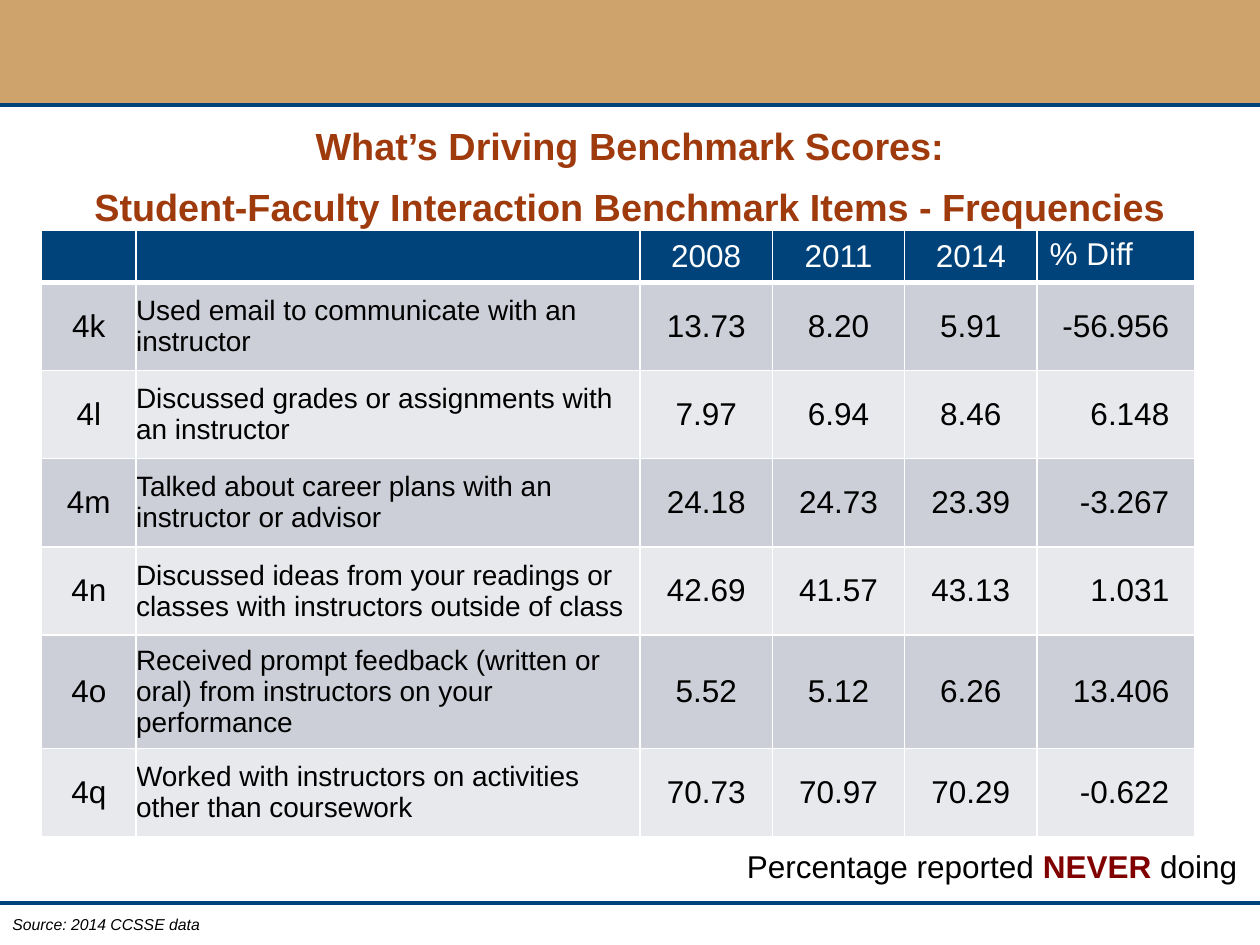
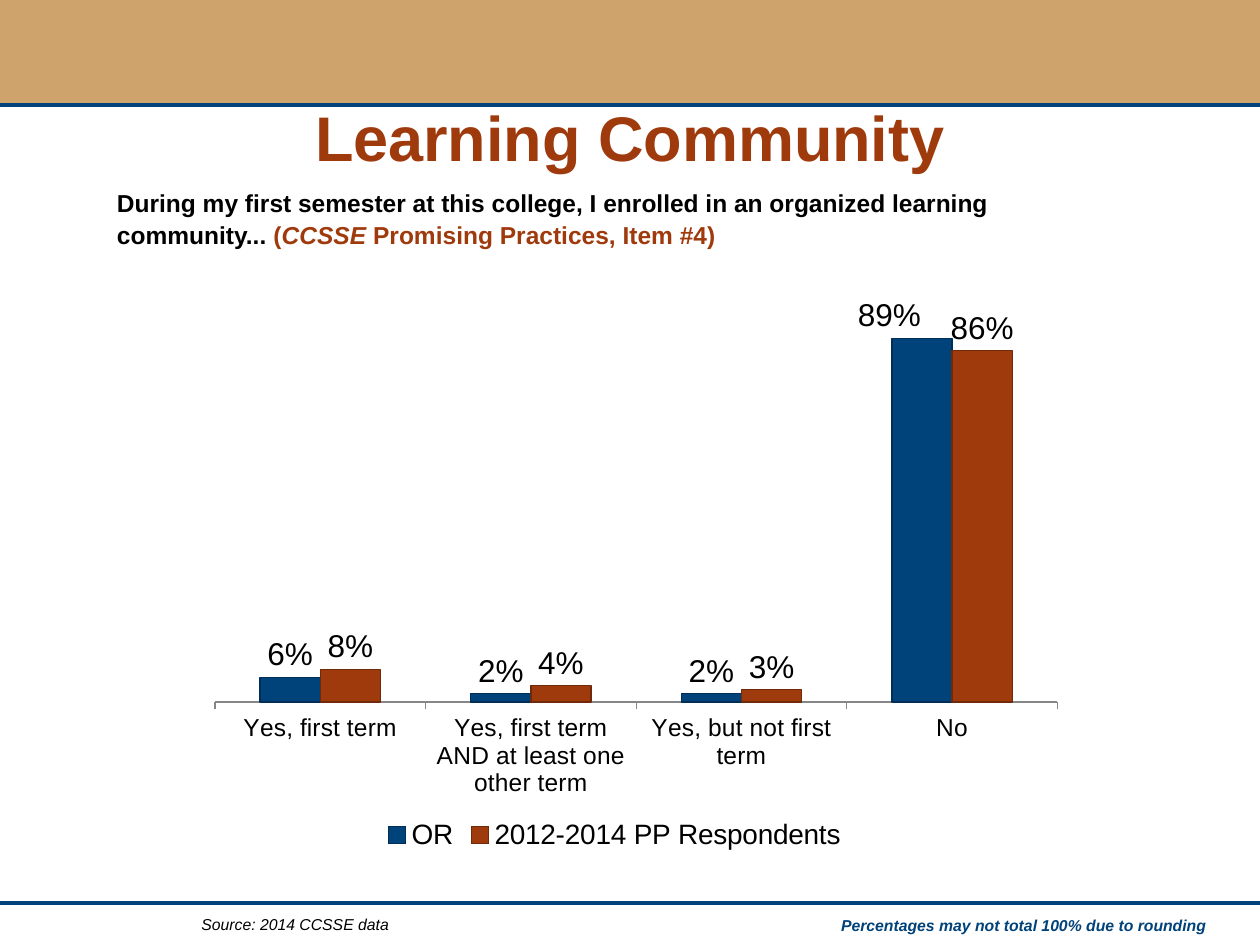
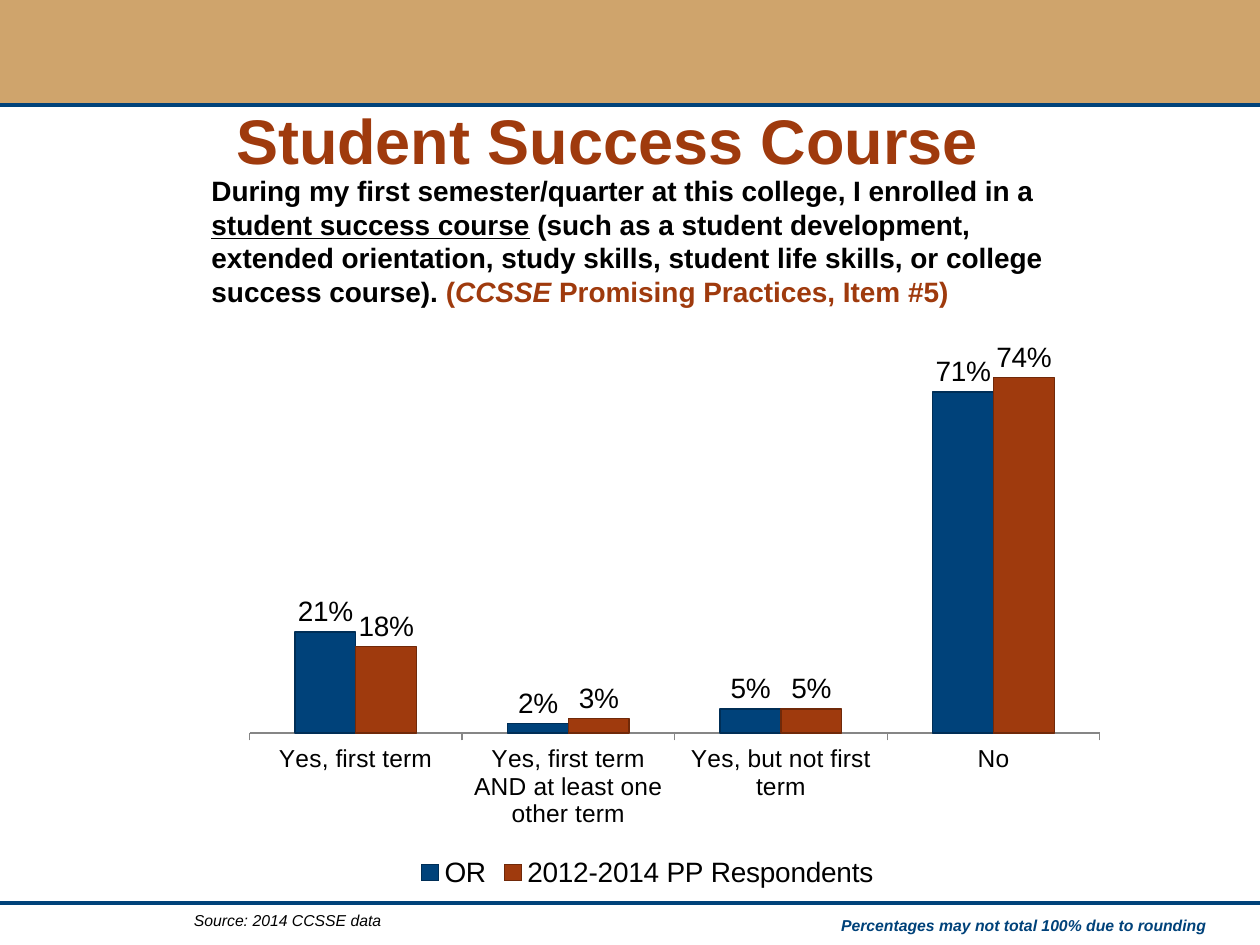
from lxml import etree
from pptx import Presentation
from pptx import util as u
from pptx.chart.data import CategoryChartData
from pptx.dml.color import RGBColor
from pptx.enum import chart as charts, shapes, text
from pptx.oxml import parse_xml
from pptx.oxml.ns import nsdecls, qn

Inches, Pt = u.Inches, u.Pt

TAN = RGBColor(0xCF, 0xA4, 0x6C)
NAVY = RGBColor(0x00, 0x42, 0x7A)
NAVY_EDGE = RGBColor(0x00, 0x2E, 0x56)
RUST = RGBColor(0x9F, 0x3A, 0x0D)
RUST_EDGE = RGBColor(0x70, 0x29, 0x09)
MAROON = RGBColor(0x80, 0x00, 0x00)
BLACK = RGBColor(0x00, 0x00, 0x00)
WHITE = RGBColor(0xFF, 0xFF, 0xFF)
AXIS_GRAY = RGBColor(0x86, 0x86, 0x86)
ROW_FILLS = (RGBColor(0xCC, 0xCF, 0xD7), RGBColor(0xE7, 0xE9, 0xEC))

FONT = "Arial"
LEFT, CENTER, RIGHT = text.PP_ALIGN.LEFT, text.PP_ALIGN.CENTER, text.PP_ALIGN.RIGHT
MIDDLE = text.MSO_ANCHOR.MIDDLE

TITLE = {"size": Pt(36), "bold": True, "color": RUST}
SOURCE = {"size": Pt(9), "italic": True}
ROUNDING = {"size": Pt(9), "bold": True, "italic": True, "color": NAVY}

HEADER = ["", "", "2008", "2011", "2014", "% Diff"]
ITEMS = [
    ["4k", "Used email to communicate with an instructor",
     "13.73", "8.20", "5.91", "-56.956"],
    ["4l", "Discussed grades or assignments with an instructor",
     "7.97", "6.94", "8.46", "6.148"],
    ["4m", "Talked about career plans with an instructor or advisor",
     "24.18", "24.73", "23.39", "-3.267"],
    ["4n", "Discussed ideas from your readings or classes with instructors outside of class",
     "42.69", "41.57", "43.13", "1.031"],
    ["4o", "Received prompt feedback (written or oral) from instructors on your performance",
     "5.52", "5.12", "6.26", "13.406"],
    ["4q", "Worked with instructors on activities other than coursework",
     "70.73", "70.97", "70.29", "-0.622"],
]
COLUMN_WIDTHS = [0.75, 4, 1.05, 1.05, 1.05, 1.25]
ROW_HEIGHTS = [0.41, 0.7, 0.7, 0.7, 0.7, 0.9, 0.7]

ANSWERS = ["Yes, first term", "Yes, first term AND at least one other term",
           "Yes, but not first term", "No"]
GROUPS = [("OR", NAVY, NAVY_EDGE), ("2012-2014 PP Respondents", RUST, RUST_EDGE)]


def set_font(font, **formats):
    formats = {"name": FONT, "color": BLACK, **formats}
    font.color.rgb = formats.pop("color")
    for name, value in formats.items():
        setattr(font, name, value)


def add_text(page, at, spans, align=LEFT, anchor=text.MSO_ANCHOR.TOP,
             wrap=True, spacing=None, **base):
    """Add a text box holding one paragraph of (words, formats) spans."""
    box = page.shapes.add_textbox(*map(Inches, at))
    frame = box.text_frame
    frame.word_wrap, frame.vertical_anchor = wrap, anchor
    para = frame.paragraphs[0]
    para.alignment = align
    if spacing:
        para.line_spacing = spacing
    for words, formats in spans:
        for number, line in enumerate(words.split("\n")):
            if number:
                para.add_line_break()
            span = para.add_run()
            span.text = line
            set_font(span.font, **{**base, **formats})


def add_title(page, at, words, **formats):
    add_text(page, at, [(words, {})], CENTER, MIDDLE, **{**TITLE, **formats})


def add_rule(page, y):
    rule = page.shapes.add_connector(
        shapes.MSO_CONNECTOR.STRAIGHT, 0, Inches(y), Inches(10), Inches(y))
    rule.line.color.rgb = NAVY
    rule.line.width = Pt(2.25)
    etree.SubElement(rule._element.spPr, qn("a:effectLst"))


def add_page(deck):
    """Add a blank slide with the tan band and the two navy rules."""
    page = deck.slides.add_slide(deck.slide_layouts[6])
    band = page.shapes.add_shape(
        shapes.MSO_SHAPE.RECTANGLE, 0, 0, Inches(10), Inches(0.83))
    band.shadow.inherit = False
    band.fill.solid()
    band.fill.fore_color.rgb = TAN
    band.line.fill.background()
    for y in (0.83, 7.17):
        add_rule(page, y)
    return page


def add_source(page, left, top):
    add_text(page, (left, top, 3.19, 0.25), [("Source: 2014 CCSSE data", SOURCE)])


def add_rounding_note(page):
    add_text(page, (6, 7.22, 3.67, 0.25),
             [("Percentages may not total 100% due to rounding", ROUNDING)], RIGHT)


def set_borders(cell, bottom):
    for side in "LRTB":
        points = bottom if side == "B" else 1
        cell._tc.get_or_add_tcPr().append(parse_xml(
            f'<a:ln{side} {nsdecls("a")} w="{Pt(points)}"><a:solidFill>'
            f'<a:srgbClr val="{WHITE}"/></a:solidFill></a:ln{side}>'))


def set_margins(cell, *inches):
    for side, inch in zip(("left", "top", "right", "bottom"), inches):
        setattr(cell, f"margin_{side}", Inches(inch))


def fill_cell(cell, words, row, column):
    is_header = row == 0
    set_borders(cell, 3 if is_header else 1)
    cell.fill.solid()
    cell.fill.fore_color.rgb = NAVY if is_header else ROW_FILLS[(row - 1) % 2]
    if not words:
        return
    para = cell.text_frame.paragraphs[0]
    para.alignment = CENTER
    cell.vertical_anchor = MIDDLE
    if is_header and column == 5:
        para.alignment = LEFT
        cell.vertical_anchor = text.MSO_ANCHOR.TOP
        set_margins(cell, 0.1, 0.05, 0.25, 0.05)
    elif column == 5:
        para.alignment = RIGHT
        set_margins(cell, 0, 0, 0.2, 0)
    elif column:
        set_margins(cell, 0, 0, 0, 0)
        if column == 1:
            para.alignment = LEFT
    span = para.add_run()
    span.text = words
    set_font(span.font, size=Pt(16 if column == 1 else 18),
             color=WHITE if is_header else BLACK)


def add_items_table(page):
    rows = [HEADER] + ITEMS
    at = (0.33, 1.83, sum(COLUMN_WIDTHS), sum(ROW_HEIGHTS))
    table = page.shapes.add_table(len(rows), len(HEADER), *map(Inches, at)).table
    for column, width in zip(table.columns, COLUMN_WIDTHS):
        column.width = Inches(width)
    for row, height in zip(table.rows, ROW_HEIGHTS):
        row.height = Inches(height)
    for r, row in enumerate(rows):
        for c, words in enumerate(row):
            fill_cell(table.cell(r, c), words, r, c)


def manual_layout(target="", **numbers):
    inner = f'<c:layoutTarget val="{target}"/>' if target else ""
    inner += "".join(f'<c:{name} val="{value}"/>' for name, value in numbers.items())
    return parse_xml(f'<c:layout {nsdecls("c")}><c:manualLayout>{inner}'
                     '</c:manualLayout></c:layout>')


def place_plot(chart, x, y, w, h):
    area = chart._chartSpace.chart.plotArea
    for old in area.findall(qn("c:layout")):
        area.remove(old)
    area.insert(0, manual_layout("inner", xMode="edge", yMode="edge", x=x, y=y, w=w, h=h))


def shift_label(series, point, x):
    """Move one data label sideways by a share of the chart width."""
    label = series.points[point].data_label
    set_font(label.font, size=Pt(18))
    label.position = charts.XL_LABEL_POSITION.OUTSIDE_END
    mark = series._element.find(qn("c:dLbls")).find(qn("c:dLbl"))
    mark.insert(1, manual_layout(x=x, y=0))


def add_answers_chart(page, at, plot_at, shares, top_value, label_size):
    data = CategoryChartData(number_format="0%")
    data.categories = ANSWERS
    for (name, _, _), values in zip(GROUPS, shares):
        data.add_series(name, values)
    chart = page.shapes.add_chart(
        charts.XL_CHART_TYPE.COLUMN_CLUSTERED, *map(Inches, at), data).chart
    set_font(chart.font, size=Pt(18))
    chart.has_title = False
    chart.has_legend = True
    chart.legend.position = charts.XL_LEGEND_POSITION.BOTTOM
    chart.legend.include_in_layout = False
    set_font(chart.legend.font, size=Pt(16))

    answers, scale = chart.category_axis, chart.value_axis
    set_font(answers.tick_labels.font, size=Pt(14))
    answers.major_tick_mark = charts.XL_TICK_MARK.OUTSIDE
    answers.format.line.color.rgb = AXIS_GRAY
    scale.minimum_scale, scale.maximum_scale = 0, top_value
    scale.has_major_gridlines = False
    scale.visible = False

    plot = chart.plots[0]
    plot.gap_width, plot.overlap, plot.vary_by_categories = 150, 0, False
    for series, (_, color, edge) in zip(plot.series, GROUPS):
        series.format.fill.solid()
        series.format.fill.fore_color.rgb = color
        series.format.line.color.rgb = edge
        series.format.line.width = Pt(0.75)
        labels = series.data_labels
        labels.show_value = True
        labels.number_format, labels.number_format_is_linked = "0%", False
        labels.position = charts.XL_LABEL_POSITION.OUTSIDE_END
        set_font(labels.font, size=Pt(label_size))
    place_plot(chart, *plot_at)
    return chart


def item_reference(number):
    return [("(", {"color": RUST}),
            ("CCSSE ", {"color": RUST, "italic": True}),
            (f"Promising Practices, Item #{number})", {"color": RUST})]


def build_frequencies(deck):
    page = add_page(deck)
    add_title(page, (0.21, 0.75, 9.58, 1.17),
              "What’s Driving Benchmark Scores:\n"
              "Student-Faculty Interaction Benchmark Items - Frequencies",
              size=Pt(21.6), spacing=Pt(35))
    add_text(page, (5.83, 6.67, 4.13, 0.4),
             [("Percentage reported ", {}),
              ("NEVER", {"color": MAROON, "bold": True}),
              (" doing", {})], wrap=False, size=Pt(18))
    add_items_table(page)
    add_source(page, 0, 7.21)


def build_learning_community(deck):
    page = add_page(deck)
    add_title(page, (1.69, 0.75, 6.62, 0.67), "Learning Community")
    add_text(page, (0.83, 1.42, 8.23, 0.67),
             [("During my first semester at this college, I enrolled in an "
               "organized learning community... ", {})] + item_reference(4),
             spacing=1.1, size=Pt(14), bold=True)
    chart = add_answers_chart(
        page, (1.19, 2.07, 7.38, 4.72), (0.07, 0.055, 0.906, 0.687),
        [(0.06, 0.02, 0.02, 0.89), (0.08, 0.04, 0.03, 0.86)], 1, 18)
    shift_label(chart.plots[0].series[0], 3, -0.035)
    add_source(page, 1.5, 7.21)
    add_rounding_note(page)


def build_success_course(deck):
    page = add_page(deck)
    add_title(page, (1.69, 0.58, 6.26, 1.06), "Student Success Course")
    add_answers_chart(
        page, (1.44, 2.33, 7.4, 4.76), (0.073, 0.092, 0.912, 0.641),
        [(0.21, 0.02, 0.05, 0.71), (0.18, 0.03, 0.05, 0.74)], 0.8, 16)
    add_text(page, (1.58, 1.33, 6.88, 1.25),
             [("During my first semester/quarter at this college, I enrolled in a ", {}),
              ("student success course", {"underline": True}),
              (" (such as a student development, extended orientation, study skills, "
               "student life skills, or college success course). ", {})]
             + item_reference(5), size=Pt(16), bold=True)
    add_source(page, 1.44, 7.18)
    add_rounding_note(page)


def main():
    deck = Presentation()
    deck.slide_width, deck.slide_height = Inches(10), Inches(7.5)
    build_frequencies(deck)
    build_learning_community(deck)
    build_success_course(deck)
    deck.save("out.pptx")


if __name__ == "__main__":
    main()
